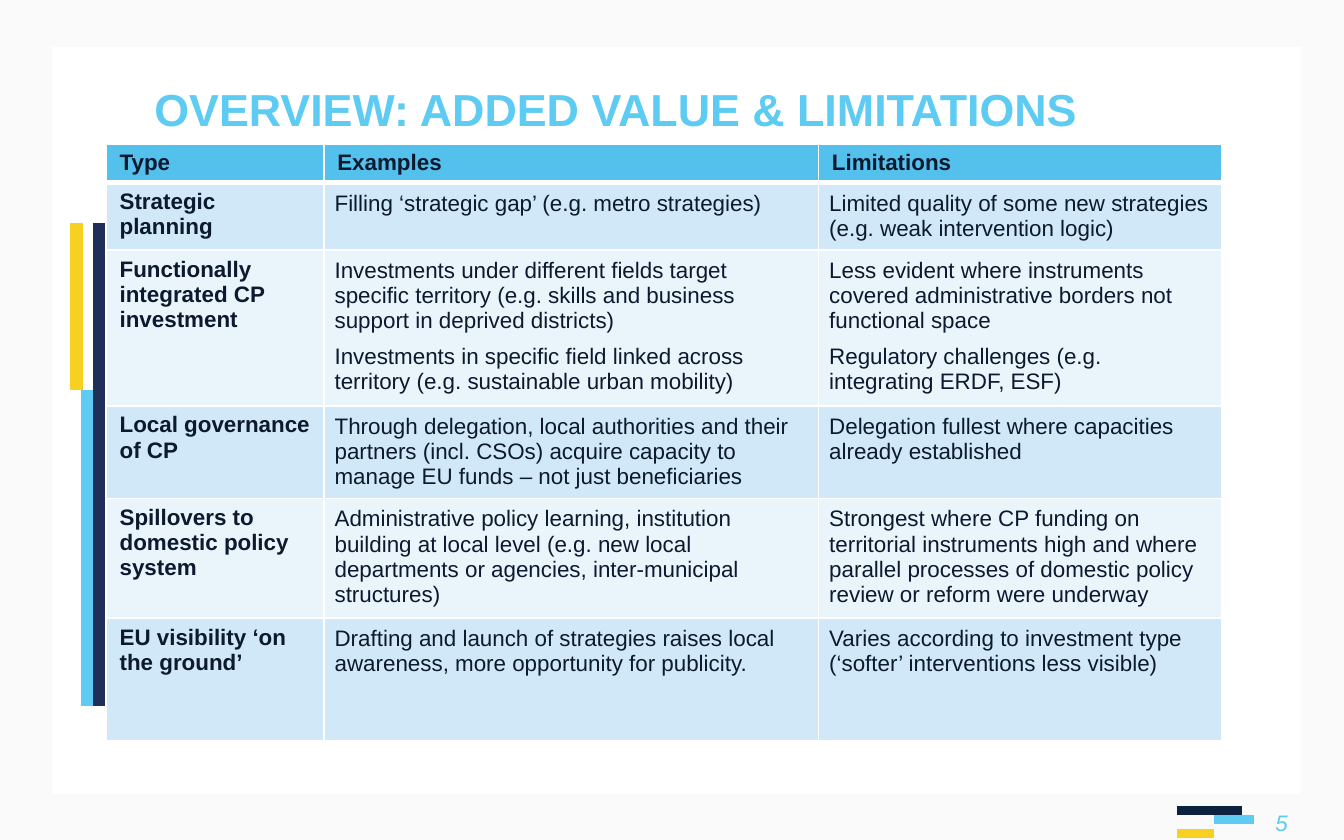
from typing import NamedTuple

from pptx import Presentation
from pptx.dml.color import RGBColor
from pptx.enum.shapes import MSO_CONNECTOR, MSO_SHAPE
from pptx.enum.text import MSO_ANCHOR, PP_ALIGN
from pptx.oxml.ns import qn
from pptx.util import Inches, Pt
from lxml import etree

RECTANGLE = MSO_SHAPE.RECTANGLE
STRAIGHT = MSO_CONNECTOR.STRAIGHT
TOP = MSO_ANCHOR.TOP
LEFT, RIGHT = PP_ALIGN.LEFT, PP_ALIGN.RIGHT

FONT = "Arial"
WHITE, FRAME_GREY, INK = "FFFFFF", "FAFAFA", "0C192F"
YELLOW, SKY, NAVY, DARK_NAVY = "F7D021", "5ECBF2", "1F2F59", "0C223F"
HEADER_BLUE = "54C0EC"
BAND_FILLS = ("D1E8F8", "E9F4FB")


class Band(NamedTuple):
    left: float
    top: float
    width: float
    height: float


class Stripe(NamedTuple):
    x1: float
    y1: float
    x2: float
    y2: float
    color: str
    weight: float


class TableRow(NamedTuple):
    height: float
    kind: str
    examples: list[str]
    limitations: list[str]


FRAME = [
    Band(0, 5.91, 10, 0.34),
    Band(9.68, 0, 0.32, 6.25),
    Band(0, 0, 10, 0.35),
    Band(0, 0, 0.39, 6.25),
]

STRIPES = [
    # Left side
    Stripe(0.57, 1.66, 0.57, 2.9, YELLOW, 7),
    Stripe(0.65, 2.9, 0.65, 5.25, SKY, 7),
    Stripe(0.74, 1.66, 0.74, 5.25, NAVY, 7),
    # Footer
    Stripe(8.76, 6.2, 9.03, 6.2, YELLOW, 5),
    Stripe(9.03, 6.1, 9.33, 6.1, SKY, 5),
    Stripe(8.76, 6.03, 9.24, 6.03, DARK_NAVY, 5),
]

COLUMN_WIDTHS = (1.62, 3.68, 3.0)
ROWS = [
    TableRow(0.29, "Type", ["Examples"], ["Limitations"]),
    TableRow(
        0.5, "Strategic planning",
        ["Filling ‘strategic gap’ (e.g. metro strategies)"],
        ["Limited quality of some new strategies (e.g. weak intervention logic)"],
    ),
    TableRow(
        1.16, "Functionally integrated CP investment",
        ["Investments under different fields target specific territory "
         "(e.g. skills and business support in deprived districts)",
         "Investments in specific field linked across territory "
         "(e.g. sustainable urban mobility)"],
        ["Less evident where instruments covered administrative borders "
         "not functional space",
         "Regulatory challenges (e.g. integrating ERDF, ESF)"],
    ),
    TableRow(
        0.69, "Local governance of CP",
        ["Through delegation, local authorities and their partners (incl. CSOs) "
         "acquire capacity to manage EU funds – not just beneficiaries"],
        ["Delegation fullest where capacities already established"],
    ),
    TableRow(
        0.89, "Spillovers to domestic policy system",
        ["Administrative policy learning, institution building at local level "
         "(e.g. new local departments or agencies, inter-municipal structures)"],
        ["Strongest where CP funding on territorial instruments high and where "
         "parallel processes of domestic policy review or reform were underway"],
    ),
    TableRow(
        0.91, "EU visibility ‘on the ground’",
        ["Drafting and launch of strategies raises local awareness, "
         "more opportunity for publicity."],
        ["Varies according to investment type (‘softer’ interventions less visible)"],
    ),
]


def rgb(color: str) -> RGBColor:
    return RGBColor.from_string(color)


def write_text(text_frame, paragraphs: list[str], *, size: float = 12,
               color: str = INK, bold: bool = False, italic: bool = False,
               align=LEFT) -> None:
    text_frame.word_wrap = True
    for index, text in enumerate(paragraphs):
        paragraph = text_frame.add_paragraph() if index else text_frame.paragraphs[0]
        paragraph.alignment = align
        if index:
            paragraph.space_before = Pt(6)
        run = paragraph.add_run()
        run.text = text
        run.font.name = FONT
        run.font.size = Pt(size)
        run.font.color.rgb = rgb(color)
        run.font.bold = bold
        run.font.italic = italic


def add_label(slide, area: Band, text: str, margin_top: float, **text_format) -> None:
    text_box = slide.shapes.add_textbox(*(Inches(length) for length in area))
    text_box.text_frame.vertical_anchor = TOP
    text_box.text_frame.margin_top = Inches(margin_top)
    write_text(text_box.text_frame, [text], **text_format)


def add_band(slide, band: Band) -> None:
    shape = slide.shapes.add_shape(RECTANGLE, *(Inches(length) for length in band))
    shape.shadow.inherit = False
    shape.fill.solid()
    shape.fill.fore_color.rgb = rgb(FRAME_GREY)
    shape.line.fill.background()


def add_stripe(slide, stripe: Stripe) -> None:
    ends = (Inches(length) for length in stripe[:4])
    connector = slide.shapes.add_connector(STRAIGHT, *ends)
    connector.line.color.rgb = rgb(stripe.color)
    connector.line.width = Pt(stripe.weight)
    etree.SubElement(connector._element.spPr, qn("a:effectLst"))


def set_borders(cell, top: float, bottom: float) -> None:
    properties = cell._tc.get_or_add_tcPr()
    for side, weight in (("L", 1), ("R", 1), ("T", top), ("B", bottom)):
        line = etree.SubElement(properties, qn(f"a:ln{side}"), w=str(Pt(weight)))
        fill = etree.SubElement(line, qn("a:solidFill"))
        etree.SubElement(fill, qn("a:srgbClr"), val=WHITE)


def add_overview_table(slide, area: Band) -> None:
    frame = slide.shapes.add_table(len(ROWS), len(COLUMN_WIDTHS),
                                   *(Inches(length) for length in area))
    table = frame.table
    for column, width in zip(table.columns, COLUMN_WIDTHS):
        column.width = Inches(width)
    for row_index, row in enumerate(ROWS):
        table.rows[row_index].height = Inches(row.height)
        is_header = row_index == 0
        fill = HEADER_BLUE if is_header else BAND_FILLS[(row_index - 1) % 2]
        contents = ([row.kind], row.examples, row.limitations)
        for column_index, paragraphs in enumerate(contents):
            cell = table.cell(row_index, column_index)
            is_heading = is_header or column_index == 0
            set_borders(cell, top=3 if row_index == 1 else 1,
                        bottom=3 if is_header else 1)
            cell.fill.solid()
            cell.fill.fore_color.rgb = rgb(fill)
            cell.vertical_anchor = TOP
            cell.margin_left = cell.margin_right = Inches(0.1 if is_heading else 0.08)
            cell.margin_top = cell.margin_bottom = Inches(0.05 if is_heading else 0.06)
            write_text(cell.text_frame, paragraphs, bold=is_heading)


def main() -> None:
    presentation = Presentation()
    presentation.slide_width = Inches(10)
    presentation.slide_height = Inches(6.25)
    slide = presentation.slides.add_slide(presentation.slide_layouts[6])

    # Grey frame and coloured stripes
    for band in FRAME:
        add_band(slide, band)
    for stripe in STRIPES:
        add_stripe(slide, stripe)

    # Table, title and page number
    add_overview_table(slide, Band(0.79, 1.07, 8.3, 4.44))
    add_label(slide, Band(1.05, 0.53, 8.01, 0.59),
              "OVERVIEW: ADDED VALUE & LIMITATIONS", 0.08,
              size=24, color=SKY, bold=True)
    add_label(slide, Band(9.03, 5.96, 0.65, 0.29), "5", 0.06,
              color=SKY, italic=True, align=RIGHT)

    presentation.save("out.pptx")


if __name__ == "__main__":
    main()
